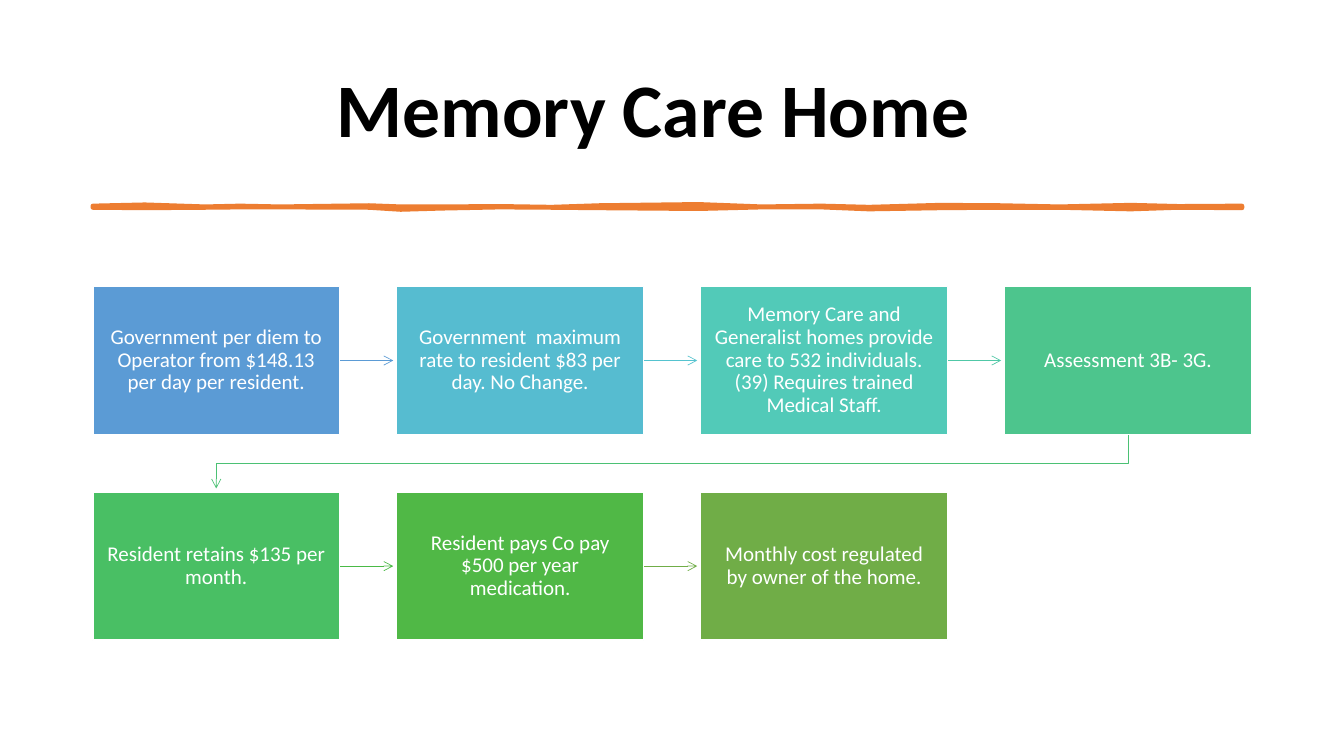
from lxml import etree
from pptx import Presentation
from pptx.dml.color import RGBColor as RGB
from pptx.enum.shapes import MSO_CONNECTOR as CONN, MSO_SHAPE as SHAPE
from pptx.enum.text import MSO_ANCHOR as ANCHOR, PP_ALIGN as ALIGN
from pptx.oxml.ns import qn
from pptx.util import Cm, Pt

COLORS = {
    "text": "000000", "box_text": "FFFFFF", "border": "FFFFFF", "rule": "ED7D31",
    "box1": "5B9BD5", "box2": "56BCD0", "box3": "52CAB8", "box4": "4DC58D",
    "box5": "49BF64", "box6": "50B846", "box7": "70AD47",
    "arrow1": "5B9BD5", "arrow2": "55C3CF", "arrow3": "50C8A7",
    "arrow4": "4BC174", "arrow5": "4ABA46", "arrow6": "70AD47",
}

STEPS = [
    "Government per diem to Operator from $148.13 per day per resident.",
    "Government  maximum rate to resident $83 per day. No Change.",
    "Memory Care and Generalist homes provide care to 532 individuals. "
    "(39) Requires trained Medical Staff.",
    "Assessment 3B- 3G.",
    "Resident retains $135 per month.",
    "Resident pays Co pay $500 per year medication.",
    "Monthly cost regulated by owner of the home.",
]

# Step grid, in cm
COLS, LEFT, TOP = 4, 2.34, 7.22
BOX_W, BOX_H = 6.22, 3.73
PITCH_X, PITCH_Y = 7.66, 5.18
ARROW_GAP = 0.09

# Hand-drawn rule: (x, rise above and sag below its middle line), in cm
RULE_Y = 5.21
RULE_WAVE = [
    (2.34, 0.02, 0.02), (3.65, 0.05, 0.03), (5.17, 0, 0.02), (6.05, 0.02, 0.01),
    (7.06, 0, 0.01), (9.3, 0.03, 0.02), (10.1, 0, 0.07), (11.1, 0, 0.04),
    (12.6, 0.01, 0.01), (13.9, -0.01, 0.02), (15.1, 0.03, 0.03), (17.6, 0.06, 0.05),
    (19.2, 0, 0.01), (20.7, 0.02, 0.01), (21.9, -0.01, 0.06), (23.7, 0.04, 0.03),
    (25.2, 0.03, 0.02), (26.7, 0, 0.02), (28.5, 0.04, 0.06), (29.7, 0.01, 0.02),
    (31.3, 0.02, 0.03),
]


class Deck:
    def __init__(self, width, height):
        self.font = "Calibri"
        self.prs = Presentation()
        self.prs.slide_width, self.prs.slide_height = Cm(width), Cm(height)
        self.s = self.prs.slides.add_slide(self.prs.slide_layouts[6])

    def put_text(self, sp, text, size, color, align, bold=False, **margins):
        tf = sp.text_frame
        frame = {"word_wrap": True, "vertical_anchor": ANCHOR.MIDDLE}
        frame.update({f"margin_{side}": Cm(v) for side, v in margins.items()})
        for name, value in frame.items():
            setattr(tf, name, value)
        p = tf.paragraphs[0]
        p.alignment, p.line_spacing = align, 0.9
        r = p.add_run()
        r.text = text
        for name, value in {"name": self.font, "size": Pt(size), "bold": bold}.items():
            setattr(r.font, name, value)
        r.font.color.rgb = RGB.from_string(COLORS[color])

    def stroke(self, sp, color, width):
        sp.line.color.rgb = RGB.from_string(COLORS[color])
        sp.line.width = Pt(width)

    def fill(self, sp, color):
        sp.fill.solid()
        sp.fill.fore_color.rgb = RGB.from_string(COLORS[color])

    def arrowhead(self, sp):
        ln = sp.element.spPr.find(qn("a:ln"))
        etree.SubElement(ln, qn("a:tailEnd"), type="arrow")

    def title(self, text, x, y, w, h, indent):
        sp = self.s.shapes.add_textbox(Cm(x), Cm(y), Cm(w), Cm(h))
        self.put_text(sp, text, 54, "text", ALIGN.LEFT, bold=True, left=indent)

    def outline(self, points, closed):
        pts = [(Cm(x), Cm(y)) for x, y in points]
        builder = self.s.shapes.build_freeform(*pts[0])
        builder.add_line_segments(pts[1:], close=closed)
        sp = builder.convert_to_shape()
        sp.shadow.inherit = False
        return sp

    def wavy_rule(self, y, wave, color):
        upper = [(x, y - rise) for x, rise, _ in wave]
        lower = [(x, y + sag) for x, _, sag in reversed(wave)]
        sp = self.outline(upper + lower, closed=True)
        self.fill(sp, color)
        self.stroke(sp, color, 3.25)

    def box(self, text, x, y, color):
        sp = self.s.shapes.add_shape(SHAPE.RECTANGLE, Cm(x), Cm(y), Cm(BOX_W), Cm(BOX_H))
        sp.shadow.inherit = False
        self.fill(sp, color)
        self.stroke(sp, "border", 1)
        self.put_text(sp, text, 15, "box_text", ALIGN.CENTER,
                      left=0.3, right=0.3, top=0.33, bottom=0.33)

    def arrow(self, x1, x2, y, color):
        sp = self.s.shapes.add_connector(CONN.STRAIGHT, Cm(x1), Cm(y), Cm(x2), Cm(y))
        self.stroke(sp, color, 0.5)
        self.arrowhead(sp)
        etree.SubElement(sp.element.spPr, qn("a:effectLst"))

    def bent_arrow(self, points, color):
        sp = self.outline(points, closed=False)
        sp.fill.background()
        self.stroke(sp, color, 0.5)
        self.arrowhead(sp)


def cell(i):
    """Left and top of step i in the grid."""
    row, col = divmod(i, COLS)
    return LEFT + col * PITCH_X, TOP + row * PITCH_Y


def add_arrow(deck, i):
    """Arrow from step i to the next one, bent where the row ends."""
    (x, y), (next_x, next_y) = cell(i), cell(i + 1)
    color = f"arrow{i + 1}"
    if y == next_y:
        deck.arrow(x + BOX_W, next_x - ARROW_GAP, y + BOX_H / 2, color)
        return
    start_x, end_x = x + BOX_W / 2, next_x + BOX_W / 2
    bottom = y + BOX_H
    middle = (bottom + next_y) / 2
    deck.bent_arrow([(start_x, bottom), (start_x, middle),
                     (end_x, middle), (end_x, next_y - ARROW_GAP)], color)


def main():
    deck = Deck(33.87, 19.05)
    deck.title("Memory Care Home", 2.34, 1.02, 29.21, 3.68, indent=6.15)
    deck.wavy_rule(RULE_Y, RULE_WAVE, "rule")
    for i, text in enumerate(STEPS):
        if i < len(STEPS) - 1:
            add_arrow(deck, i)
        deck.box(text, *cell(i), f"box{i + 1}")
    deck.prs.save("out.pptx")


if __name__ == "__main__":
    main()
